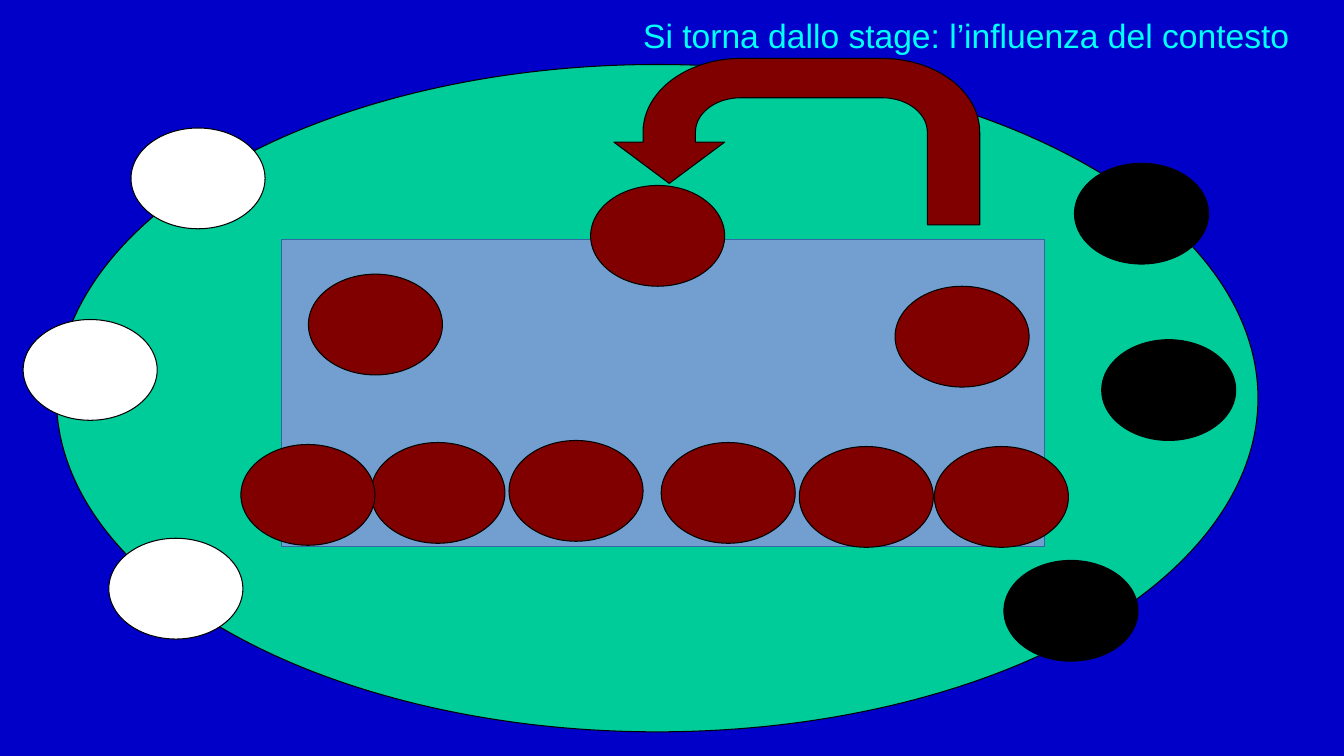
from math import cos, radians, sin

from pptx import Presentation
from pptx.dml.color import RGBColor
from pptx.enum.shapes import MSO_SHAPE
from pptx.enum.text import MSO_ANCHOR, PP_ALIGN
from pptx.util import Emu, Pt

PX = 9144  # EMU per px, 100 px to the inch

BLUE = RGBColor(0x00, 0x00, 0xC8)
CYAN = RGBColor(0x00, 0xFF, 0xFF)
GREEN = RGBColor(0x00, 0xCC, 0x99)
TABLE_FILL = RGBColor(0x72, 0x9F, 0xCF)
TABLE_LINE = RGBColor(0x34, 0x65, 0xA4)
MAROON = RGBColor(0x80, 0x00, 0x00)
BLACK = RGBColor(0x00, 0x00, 0x00)
WHITE = RGBColor(0xFF, 0xFF, 0xFF)

SEAT_W, SEAT_H = 133, 100


def px(n):
    return Emu(round(n * PX))


def arc(cx, cy, rx, ry, start, end, steps=24):
    """Points of an elliptical arc, angles in degrees, counter-clockwise."""
    angles = [radians(start + (end - start) * i / steps) for i in range(steps + 1)]
    return [(cx + rx * cos(a), cy - ry * sin(a)) for a in angles]


class Board:
    font = "Arial"
    line_width = Pt(0.75)

    def __init__(self, slide, background):
        self.shapes = slide.shapes
        fill = slide.background.fill
        fill.solid()
        fill.fore_color.rgb = background

    def paint(self, sp, fill, line):
        sp.shadow.inherit = False
        sp.fill.solid()
        sp.fill.fore_color.rgb = fill
        sp.line.color.rgb = line
        sp.line.width = self.line_width

    def shape(self, kind, x, y, w, h, fill, line=BLACK):
        sp = self.shapes.add_shape(kind, px(x), px(y), px(w), px(h))
        self.paint(sp, fill, line)

    def seat(self, x, y, fill):
        self.shape(MSO_SHAPE.OVAL, x, y, SEAT_W, SEAT_H, fill)

    def outline(self, points, fill, line=BLACK):
        start, *rest = [(px(x), px(y)) for x, y in points]
        builder = self.shapes.build_freeform(*start)
        builder.add_line_segments(rest, close=True)
        self.paint(builder.convert_to_shape(), fill, line)

    def title(self, text, x, y, w, h, size, color):
        tf = self.shapes.add_textbox(px(x), px(y), px(w), px(h)).text_frame
        tf.word_wrap = True
        tf.vertical_anchor = MSO_ANCHOR.MIDDLE
        p = tf.paragraphs[0]
        p.alignment = PP_ALIGN.RIGHT
        r = p.add_run()
        r.text = text
        r.font.name = self.font
        r.font.size = Pt(size)
        r.font.color.rgb = color


def main():
    prs = Presentation()
    prs.slide_width, prs.slide_height = Emu(12192000), px(750)
    board = Board(prs.slides.add_slide(prs.slide_layouts[6]), BLUE)

    board.title("Si torna dallo stage: l’influenza del contesto",
                177, 0, 1112, 70, 24, CYAN)

    # Context and table
    board.shape(MSO_SHAPE.OVAL, 56, 64, 1192, 662, GREEN)
    board.shape(MSO_SHAPE.RECTANGLE, 279, 238, 757, 304, TABLE_FILL, TABLE_LINE)

    # People at the table
    for x, y in [(368, 439), (239, 441), (306, 272), (888, 284),
                 (505, 437), (793, 443), (927, 443), (656, 439)]:
        board.seat(x, y, MAROON)

    # Return arrow: outer bend, head, then inner bend
    left, right, bend = 735, 875, 131
    board.outline(
        [(972, 223)]
        + arc(right, bend, 97, 73, 0, 90)
        + arc(left, bend, 97, 73, 90, 180)
        + [(638, 141), (609, 141), (664, 182), (719, 141), (690, 141)]
        + arc(left, bend, 45, 34, 180, 90)
        + arc(right, bend, 45, 34, 90, 0)
        + [(920, 223)],
        MAROON)
    board.seat(586, 184, MAROON)

    # People around the context
    for fill, places in [
        (BLACK, [(1066, 162), (1093, 337), (996, 556)]),
        (WHITE, [(130, 127), (108, 534), (23, 317)]),
    ]:
        for x, y in places:
            board.seat(x, y, fill)

    prs.save("out.pptx")


if __name__ == "__main__":
    main()
